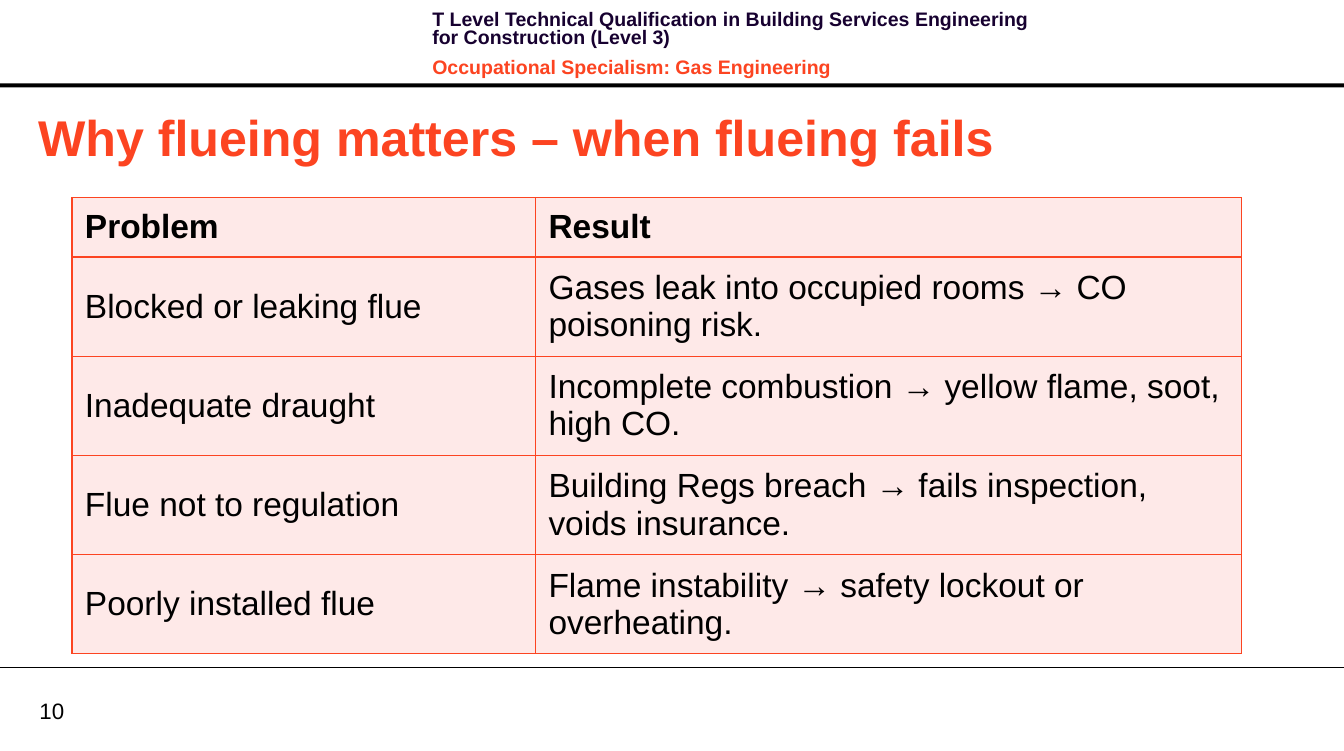
from lxml import etree
from pptx import Presentation
from pptx.dml.color import RGBColor
from pptx.enum.shapes import MSO_CONNECTOR, MSO_SHAPE
from pptx.enum.text import MSO_ANCHOR, PP_ALIGN
from pptx.oxml.ns import qn
from pptx.util import Cm, Pt

TITLE_ONLY_LAYOUT = 5
STRAIGHT = MSO_CONNECTOR.STRAIGHT
RECTANGLE = MSO_SHAPE.RECTANGLE
MIDDLE = MSO_ANCHOR.MIDDLE
TOP = MSO_ANCHOR.TOP
LEFT = PP_ALIGN.LEFT

BLACK = RGBColor(0x00, 0x00, 0x00)
NAVY = RGBColor(0x17, 0x01, 0x30)
ORANGE = RGBColor(0xFC, 0x44, 0x21)
PALE_PINK = RGBColor(0xFE, 0xE9, 0xE8)

FONT = "Arial"
SLIDE_WIDTH = Cm(34.01)
SLIDE_HEIGHT = Cm(19)

COLUMN_WIDTHS = [Cm(11.73), Cm(17.86)]
HEADING_ROW_HEIGHT = Cm(1.5)
ROW_HEIGHT = Cm(2.51)
PROBLEMS = [
    ("Problem", "Result"),
    ("Blocked or leaking flue", "Gases leak into occupied rooms → CO poisoning risk."),
    ("Inadequate draught", "Incomplete combustion → yellow flame, soot, high CO."),
    ("Flue not to regulation", "Building Regs breach → fails inspection, voids insurance."),
    ("Poorly installed flue", "Flame instability → safety lockout or overheating."),
]


def write(paragraph, text, size, color=BLACK, bold=False, line_spacing=None,
          before=0, after=0):
    paragraph.text = text
    paragraph.alignment = LEFT
    paragraph.line_spacing = line_spacing
    paragraph.space_before = Pt(before)
    paragraph.space_after = Pt(after)
    font = paragraph.font
    font.name = FONT
    font.size = Pt(size)
    font.bold = bold
    font.color.rgb = color


def set_margins(target, horizontal, vertical):
    target.margin_left = target.margin_right = horizontal
    target.margin_top = target.margin_bottom = vertical


def add_text_frame(slide, left, top, width, height, anchor=TOP):
    text_frame = slide.shapes.add_textbox(left, top, width, height).text_frame
    text_frame.word_wrap = True
    text_frame.vertical_anchor = anchor
    return text_frame


def add_header(slide):
    text_frame = add_text_frame(slide, Cm(10.69), Cm(0.18), Cm(16.18), Cm(1.63))
    write(text_frame.paragraphs[0],
          "T Level Technical Qualification in Building Services Engineering "
          "for Construction (Level 3)",
          size=14, color=NAVY, bold=True, line_spacing=Pt(13.1), after=4)
    write(text_frame.add_paragraph(), "Occupational Specialism: Gas Engineering",
          size=14, color=ORANGE, bold=True, line_spacing=Pt(13.1), before=4, after=4)

    bar = slide.shapes.add_shape(RECTANGLE, 0, Cm(2.11), SLIDE_WIDTH, Cm(0.1))
    bar.shadow.inherit = False
    bar.fill.solid()
    bar.fill.fore_color.rgb = BLACK
    bar.line.fill.background()


def add_footer(slide):
    rule = slide.shapes.add_connector(STRAIGHT, 0, Cm(16.9), SLIDE_WIDTH, Cm(16.9))
    rule.line.color.rgb = BLACK
    rule.line.width = Pt(0.75)
    properties = rule.element.find(qn("p:spPr"))
    etree.SubElement(properties, qn("a:effectLst"))

    text_frame = add_text_frame(slide, Cm(1), Cm(17.63), Cm(1.63), Cm(0.69), MIDDLE)
    set_margins(text_frame, 0, 0)
    write(text_frame.paragraphs[0], "10", size=16)


def place_title(slide, text):
    title = slide.shapes.title
    title.left, title.top = Cm(0.71), Cm(2.74)
    title.width, title.height = Cm(32.31), Cm(1.63)
    title.text_frame.vertical_anchor = MIDDLE
    write(title.text_frame.paragraphs[0], text, size=36, color=ORANGE, bold=True,
          line_spacing=0.9)


def add_borders(cell, color, width):
    properties = cell._tc.get_or_add_tcPr()
    for side in ("a:lnL", "a:lnR", "a:lnT", "a:lnB"):
        border = etree.SubElement(properties, qn(side), w=str(width))
        fill = etree.SubElement(border, qn("a:solidFill"))
        etree.SubElement(fill, qn("a:srgbClr"), val=str(color))


def format_cell(cell, text, bold):
    set_margins(cell, Cm(0.33), Cm(0.18))
    cell.vertical_anchor = MIDDLE
    add_borders(cell, ORANGE, Pt(1))
    cell.fill.solid()
    cell.fill.fore_color.rgb = PALE_PINK
    write(cell.text_frame.paragraphs[0], text, size=24, bold=bold)


def add_problem_table(slide):
    row_heights = [HEADING_ROW_HEIGHT] + [ROW_HEIGHT] * (len(PROBLEMS) - 1)
    table = slide.shapes.add_table(
        len(PROBLEMS), len(COLUMN_WIDTHS), Cm(1.82), Cm(5),
        sum(COLUMN_WIDTHS), sum(row_heights)).table
    for column, width in zip(table.columns, COLUMN_WIDTHS):
        column.width = width
    for row_index, (row, texts) in enumerate(zip(table.rows, PROBLEMS)):
        row.height = row_heights[row_index]
        for cell, text in zip(row.cells, texts):
            format_cell(cell, text, bold=row_index == 0)


def main():
    presentation = Presentation()
    presentation.slide_width = SLIDE_WIDTH
    presentation.slide_height = SLIDE_HEIGHT
    layout = presentation.slide_layouts[TITLE_ONLY_LAYOUT]
    slide = presentation.slides.add_slide(layout)
    add_header(slide)
    add_footer(slide)
    place_title(slide, "Why flueing matters – when flueing fails")
    add_problem_table(slide)
    presentation.save("out.pptx")


if __name__ == "__main__":
    main()
